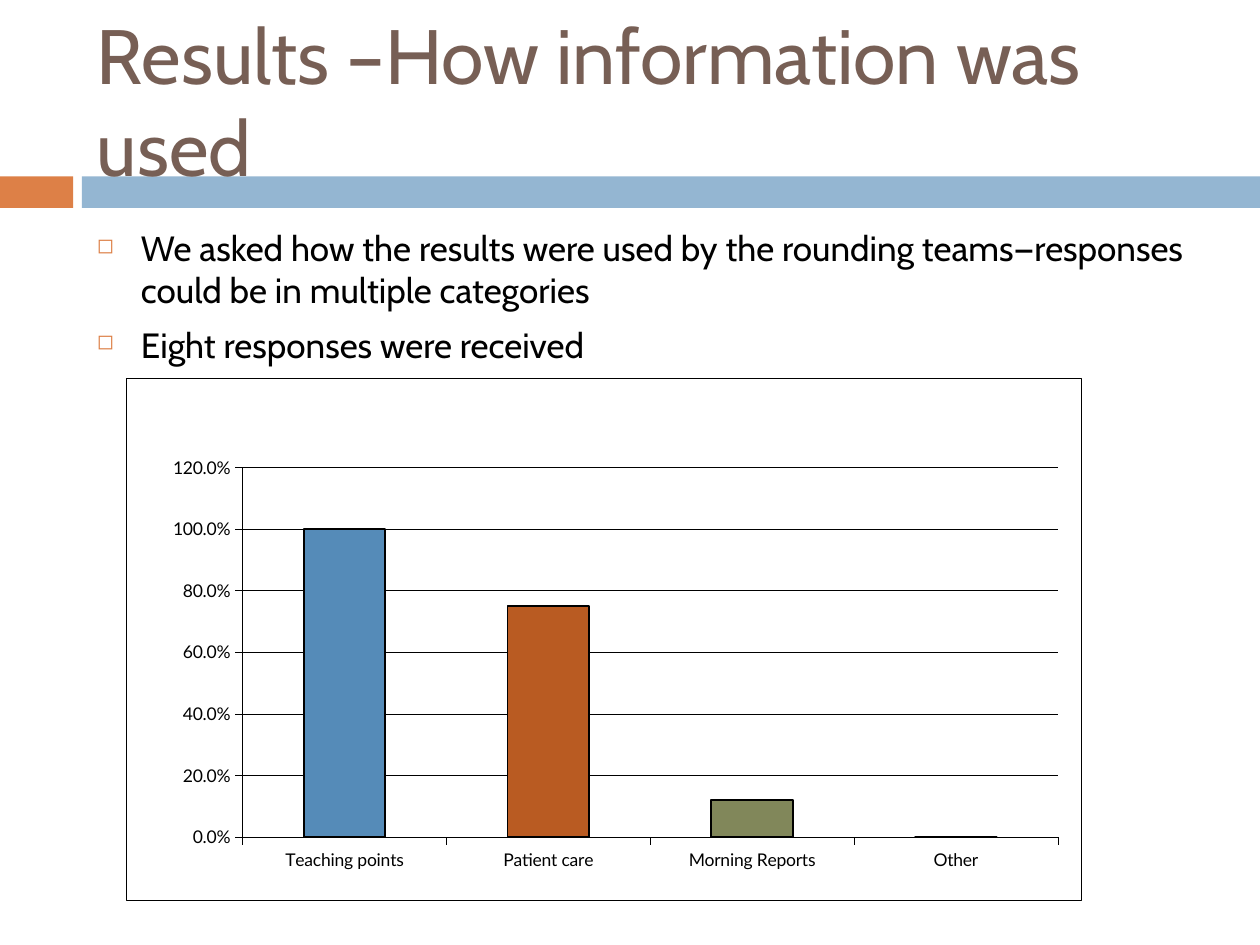
from dataclasses import dataclass

from lxml import etree
from pptx import Presentation
from pptx import util as u
from pptx.chart.data import CategoryChartData
from pptx.dml.color import RGBColor
from pptx.enum import chart as charts, shapes, text
from pptx.oxml import parse_xml
from pptx.oxml.ns import nsdecls, qn

WIDTH, HEIGHT = u.Inches(10), u.Inches(7.5)
BLACK = RGBColor(0x00, 0x00, 0x00)
BROWN = RGBColor(0x77, 0x5F, 0x55)
ORANGE = RGBColor(0xDD, 0x80, 0x47)
PALE_BLUE = RGBColor(0x94, 0xB6, 0xD2)
BLUE = RGBColor(0x55, 0x8B, 0xB8)
RUST = RGBColor(0xB9, 0x5B, 0x22)
OLIVE = RGBColor(0x81, 0x87, 0x5A)
TEXT_FONT, CHART_FONT = "Cabin", "Lato"
HAIRLINE = u.Pt(0.25)


@dataclass(frozen=True)
class Area:
    """A rectangle given in shares of the slide's width and height."""
    left: float
    top: float
    width: float
    height: float

    def lengths(self) -> tuple:
        return (round(self.left * WIDTH), round(self.top * HEIGHT),
                round(self.width * WIDTH), round(self.height * HEIGHT))


@dataclass(frozen=True)
class Band:
    area: Area
    color: RGBColor


@dataclass(frozen=True)
class Response:
    category: str
    share: float
    color: RGBColor


BAND_TOP, BAND_HEIGHT = 1.4 / 7.5, 0.25 / 7.5
BANDS = (
    Band(Area(0, BAND_TOP, 0.058, BAND_HEIGHT), ORANGE),
    Band(Area(0.065, BAND_TOP, 0.935, BAND_HEIGHT), PALE_BLUE),
)
TITLE_AREA = Area(0.067, 0.25 / 7.5, 0.892, 1.08 / 7.5)
BODY_AREA = Area(0.067, 1.75 / 7.5, 0.892, 4.92 / 7.5)
CHART_AREA = Area(0.1, 0.4, 0.758, 4.15 / 7.5)
PLOT_SHARES = {"x": 0.122, "y": 0.171, "w": 0.854, "h": 0.708}

TITLE = "Results –How information was used"
BULLETS = (
    "We asked how the results were used by the rounding teams—responses "
    "could be in multiple categories",
    "Eight responses were received",
)
RESPONSES = (
    Response("Teaching points", 1, BLUE),
    Response("Patient care", 0.75, RUST),
    Response("Morning Reports", 0.12, OLIVE),
    Response("Other", 0, BLUE),
)


def add_band(page, band: Band) -> None:
    box = page.shapes.add_shape(shapes.MSO_SHAPE.RECTANGLE, *band.area.lengths())
    box.shadow.inherit = False
    box.fill.solid()
    box.fill.fore_color.rgb = band.color
    box.line.fill.background()


def add_text(page, area: Area, lines: tuple, size: float, color: RGBColor,
             anchor=text.MSO_ANCHOR.TOP):
    frame = page.shapes.add_textbox(*area.lengths()).text_frame
    frame.word_wrap = True
    frame.vertical_anchor = anchor
    frame.text = "\n".join(lines)
    for para in frame.paragraphs:
        for span in para.runs:
            span.font.name = TEXT_FONT
            span.font.size = u.Pt(size)
            span.font.color.rgb = color
    return frame


def add_bullet(para) -> None:
    para.space_before = u.Pt(7)
    props = para._p.get_or_add_pPr()
    indent = u.Inches(0.35)
    props.set("marL", str(indent))
    props.set("indent", str(-indent))
    color = etree.SubElement(props, qn("a:buClr"))
    etree.SubElement(color, qn("a:srgbClr"), val=str(ORANGE))
    etree.SubElement(props, qn("a:buSzPct"), val="60000")
    etree.SubElement(props, qn("a:buChar"), char="◻")


def style_line(line, width=HAIRLINE) -> None:
    line.color.rgb = BLACK
    line.width = width


def style_axis(axis) -> None:
    axis.major_tick_mark = charts.XL_TICK_MARK.OUTSIDE
    axis.minor_tick_mark = charts.XL_TICK_MARK.NONE
    style_line(axis.format.line)


def frame_chart(chart) -> None:
    """Place the inner plot area and outline the whole chart."""
    area = chart._chartSpace.find(f".//{qn('c:plotArea')}")
    for old in area.findall(qn("c:layout")):
        area.remove(old)
    shares = "".join(f'<c:{key} val="{share}"/>' for key, share in PLOT_SHARES.items())
    area.insert(0, parse_xml(
        f'<c:layout {nsdecls("c")}><c:manualLayout><c:layoutTarget val="inner"/>'
        f'<c:xMode val="edge"/><c:yMode val="edge"/>{shares}'
        '</c:manualLayout></c:layout>'))
    chart._chartSpace.find(qn("c:chart")).addnext(parse_xml(
        f'<c:spPr {nsdecls("c", "a")}><a:noFill/><a:ln w="{HAIRLINE}"><a:solidFill>'
        f'<a:srgbClr val="{BLACK}"/></a:solidFill></a:ln></c:spPr>'))


def add_response_chart(page) -> None:
    data = CategoryChartData(number_format="0.0%")
    data.categories = [response.category for response in RESPONSES]
    data.add_series("Series 1", [response.share for response in RESPONSES])
    chart = page.shapes.add_chart(charts.XL_CHART_TYPE.COLUMN_CLUSTERED,
                                  *CHART_AREA.lengths(), data).chart
    chart.has_title = False
    chart.has_legend = False
    chart.font.name = CHART_FONT
    chart.font.size = u.Pt(10)
    chart.font.color.rgb = BLACK

    style_axis(chart.category_axis)
    values = chart.value_axis
    style_axis(values)
    values.minimum_scale, values.maximum_scale, values.major_unit = 0, 1.2, 0.2
    values.tick_labels.number_format = "0.0%"
    values.tick_labels.number_format_is_linked = False
    values.has_major_gridlines = True
    style_line(values.major_gridlines.format.line)

    plot = chart.plots[0]
    plot.gap_width = 150
    plot.vary_by_categories = False
    series = plot.series[0]
    for index, response in enumerate(RESPONSES):
        look = series.points[index].format
        look.fill.solid()
        look.fill.fore_color.rgb = response.color
        style_line(look.line, u.Pt(1))
    frame_chart(chart)


def main() -> None:
    deck = Presentation()
    deck.slide_width, deck.slide_height = WIDTH, HEIGHT
    page = deck.slides.add_slide(deck.slide_layouts[6])
    for band in BANDS:
        add_band(page, band)
    add_text(page, TITLE_AREA, (TITLE,), 44, BROWN, text.MSO_ANCHOR.MIDDLE)
    body = add_text(page, BODY_AREA, BULLETS, 20, BLACK)
    for para in body.paragraphs:
        add_bullet(para)
    add_response_chart(page)
    deck.save("out.pptx")


if __name__ == "__main__":
    main()
